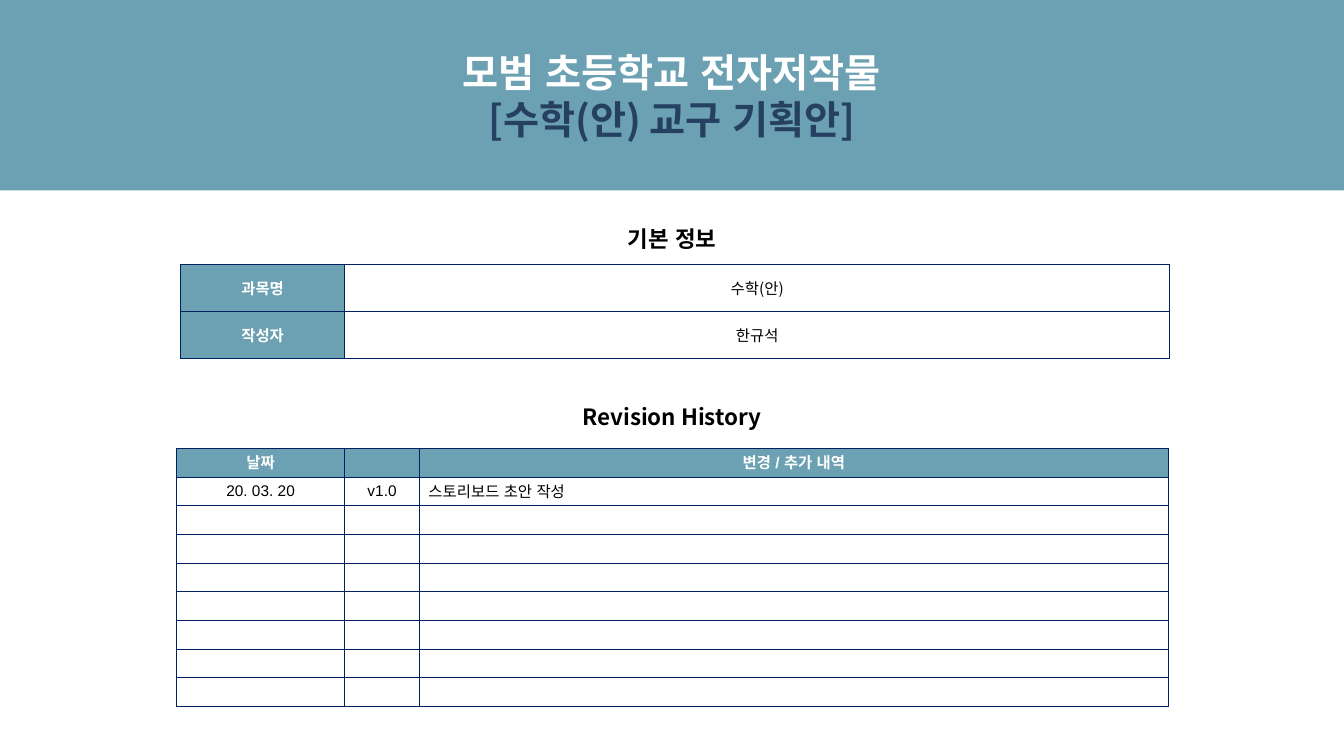
import dataclasses
import typing

import lxml.etree
import pptx
import pptx.dml.color
import pptx.enum.lang
import pptx.enum.text
import pptx.oxml
import pptx.oxml.ns
import pptx.util

Inches = pptx.util.Inches
Align = pptx.enum.text.PP_ALIGN
Anchor = pptx.enum.text.MSO_ANCHOR

KOREAN_FONT = "Noto Sans CJK KR"
TEAL, NAVY, SLATE = "6BA1B2", "002060", "254061"
WHITE, BLACK = "FFFFFF", "000000"


@dataclasses.dataclass
class TextStyle:
    size: float
    color: str = BLACK
    bold: bool = False
    font: str = KOREAN_FONT
    align: typing.Any = Align.CENTER
    line_spacing: float = 1.0


@dataclasses.dataclass
class Cell:
    text: str = ""
    style: TextStyle = dataclasses.field(default_factory=lambda: TextStyle(11, font="Arial"))
    fill: str = ""


@dataclasses.dataclass
class Grid:
    left: float
    top: float
    columns: list[float]
    row_height: float
    rows: list[list[Cell]]


@dataclasses.dataclass
class Heading:
    text: str
    top: float


def rgb(value: str) -> pptx.dml.color.RGBColor:
    return pptx.dml.color.RGBColor.from_string(value)


def set_values(target: typing.Any, values: dict[str, typing.Any]) -> None:
    for name, value in values.items():
        setattr(target, name, value)


def write(paragraph: typing.Any, text: str, style: TextStyle) -> None:
    set_values(paragraph, {"alignment": style.align, "line_spacing": style.line_spacing})
    if not text:
        end = lxml.etree.SubElement(paragraph._p, pptx.oxml.ns.qn("a:endParaRPr"))
        end.set("sz", str(int(style.size * 100)))
        latin = lxml.etree.SubElement(end, pptx.oxml.ns.qn("a:latin"))
        latin.set("typeface", style.font)
        return
    run = paragraph.add_run()
    run.text = text
    set_values(run.font, {
        "size": pptx.util.Pt(style.size),
        "bold": style.bold,
        "name": style.font,
        "language_id": pptx.enum.lang.MSO_LANGUAGE_ID.KOREAN,
    })
    run.font.color.rgb = rgb(style.color)
    east_asian = lxml.etree.SubElement(run.font._element, pptx.oxml.ns.qn("a:ea"))
    east_asian.set("typeface", KOREAN_FONT)


def add_borders(cell: typing.Any) -> None:
    properties = cell._tc.get_or_add_tcPr()
    for index, side in enumerate(("lnL", "lnR", "lnT", "lnB")):
        properties.insert(index, pptx.oxml.parse_xml(
            f'<a:{side} {pptx.oxml.ns.nsdecls("a")} w="12700"><a:solidFill>'
            f'<a:srgbClr val="{NAVY}"/></a:solidFill></a:{side}>'
        ))


def draw_grid(slide: typing.Any, grid: Grid) -> None:
    table = slide.shapes.add_table(
        len(grid.rows), len(grid.columns), Inches(grid.left), Inches(grid.top),
        Inches(sum(grid.columns)), Inches(grid.row_height * len(grid.rows)),
    ).table
    set_values(table, {"first_row": False, "horz_banding": False})
    for column, width in zip(table.columns, grid.columns):
        column.width = Inches(width)
    for row_index, row in enumerate(grid.rows):
        table.rows[row_index].height = Inches(grid.row_height)
        for column_index, content in enumerate(row):
            cell = table.cell(row_index, column_index)
            set_values(cell, {
                "vertical_anchor": Anchor.MIDDLE,
                "margin_left": Inches(0.09),
                "margin_right": Inches(0.09),
                "margin_top": Inches(0.03),
                "margin_bottom": Inches(0.03),
            })
            if content.fill:
                cell.fill.solid()
                cell.fill.fore_color.rgb = rgb(content.fill)
            else:
                cell.fill.background()
            add_borders(cell)
            write(cell.text_frame.paragraphs[0], content.text, content.style)


def draw_heading(slide: typing.Any, heading: Heading) -> None:
    box = slide.shapes.add_textbox(Inches(5.65), Inches(heading.top), Inches(2.03), Inches(0.37))
    set_values(box.text_frame, {"word_wrap": False, "vertical_anchor": Anchor.MIDDLE})
    write(box.text_frame.paragraphs[0], heading.text, TextStyle(16, bold=True))


def draw_banner(slide: typing.Any, width: int) -> None:
    banner = slide.shapes.title
    set_values(banner, {"left": 0, "top": 0, "width": width, "height": Inches(1.89)})
    banner.fill.solid()
    banner.fill.fore_color.rgb = rgb(TEAL)
    frame = banner.text_frame
    set_values(frame, {
        "vertical_anchor": Anchor.MIDDLE,
        "word_wrap": True,
        "auto_size": pptx.enum.text.MSO_AUTO_SIZE.NONE,
    })
    write(frame.paragraphs[0], "모범 초등학교 전자저작물", TextStyle(28, WHITE, True))
    write(frame.add_paragraph(), "[수학(안) 교구 기획안]", TextStyle(28, SLATE, True))


def label(text: str, line_spacing: float = 1.0) -> Cell:
    return Cell(text, TextStyle(11, WHITE, True, "Arial", line_spacing=line_spacing), TEAL)


def main() -> None:
    presentation = pptx.Presentation()
    set_values(presentation, {"slide_width": Inches(13.33), "slide_height": Inches(7.5)})
    slide = presentation.slides.add_slide(presentation.slide_layouts.get_by_name("Title Only"))
    draw_banner(slide, presentation.slide_width)

    for heading in (Heading("기본 정보", 2.18), Heading("Revision History", 3.95)):
        draw_heading(slide, heading)

    value_style = TextStyle(11)
    basic_info = [("과목명", "수학(안)"), ("작성자", "한규석")]
    draw_grid(slide, Grid(1.79, 2.62, [1.63, 8.18], 0.47, [
        [label(name), Cell(value, value_style)] for name, value in basic_info
    ]))

    note_style = TextStyle(11, font="Arial", align=Align.LEFT, line_spacing=0.9)
    header = [label(text, 0.9) for text in ("날짜", "", "변경 / 추가 내역")]
    first_entry = [Cell("20. 03. 20"), Cell("v1.0"), Cell("스토리보드 초안 작성", note_style)]
    blank_rows = [[Cell() for _ in header] for _ in range(7)]
    draw_grid(slide, Grid(1.75, 4.45, [1.67, 0.74, 7.43], 2.56 / 9, [
        header, first_entry, *blank_rows
    ]))

    presentation.save("out.pptx")


if __name__ == "__main__":
    main()
